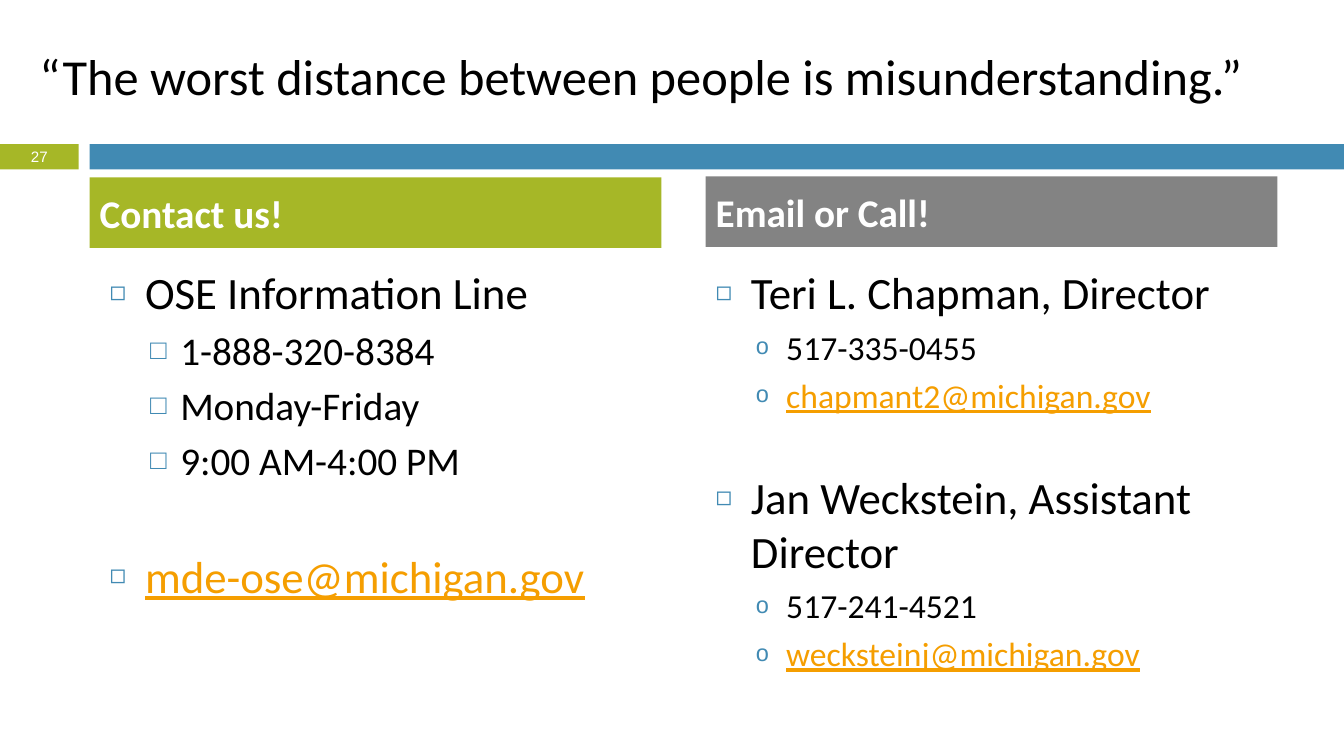
from dataclasses import dataclass

from lxml.etree import SubElement
from pptx import Presentation
from pptx.dml.color import RGBColor as RGB
from pptx.enum.shapes import MSO_SHAPE as SHAPE
from pptx.enum.text import MSO_ANCHOR as ANCHOR, PP_ALIGN as ALIGN
from pptx.oxml.ns import qn
from pptx.util import Inches, Pt


@dataclass(frozen=True)
class Theme:
    blue: str = "418AB3"
    green: str = "A6B727"
    gray: str = "838383"
    link: str = "F59E00"
    black: str = "000000"
    white: str = "FFFFFF"
    font: str = "Calibri"
    number_font: str = "Arial"
    title: float = 36
    item: float = 32
    head: float = 28
    number: float = 10.8


THEME = Theme()
LEVELS = [(0.35, 0.35, 60, 7), (0.7, 0.3, 70, 5.5)]


def write(p, text, size, color=THEME.black, font=THEME.font,
          bold=False, underline=False, align=ALIGN.LEFT):
    p.alignment = align
    r = p.add_run()
    r.text = text
    f = r.font
    f.name, f.size, f.bold, f.underline = font, Pt(size), bold, underline
    f.color.rgb = RGB.from_string(color)


def add_bullet(p, char, level, color):
    indent, hang, percent, _ = LEVELS[level]
    pPr = p._p.get_or_add_pPr()
    pPr.set("marL", str(Inches(indent)))
    pPr.set("indent", str(-Inches(hang)))
    SubElement(SubElement(pPr, qn("a:buClr")), qn("a:srgbClr"), val=color)
    SubElement(pPr, qn("a:buSzPct"), val=str(percent * 1000))
    SubElement(pPr, qn("a:buFont"), typeface=THEME.number_font)
    SubElement(pPr, qn("a:buChar"), char=char)


class ContactSlide:
    def __init__(self, prs, theme):
        self.theme = theme
        self.s = prs.slides.add_slide(prs.slide_layouts[5])

    def title(self, text, x, y, w, h):
        sp = self.s.shapes.title
        sp.left, sp.top, sp.width, sp.height = map(Inches, (x, y, w, h))
        tf = sp.text_frame
        tf.margin_left = tf.margin_right = tf.margin_top = tf.margin_bottom = 0
        tf.vertical_anchor = ANCHOR.MIDDLE
        tf.word_wrap = True
        write(tf.paragraphs[0], text, self.theme.title)

    def bar(self, x, y, w, h, fill, text="", **style):
        sp = self.s.shapes.add_shape(SHAPE.RECTANGLE, *map(Inches, (x, y, w, h)))
        sp.shadow.inherit = False
        sp.fill.solid()
        sp.fill.fore_color.rgb = RGB.from_string(fill)
        sp.line.fill.background()
        if text:
            tf = sp.text_frame
            tf.word_wrap = True
            tf.vertical_anchor = ANCHOR.MIDDLE
            write(tf.paragraphs[0], text, color=self.theme.white, **style)

    def contacts(self, x, y, w, h, items, char, sub_size, gap):
        tf = self.s.shapes.add_textbox(*map(Inches, (x, y, w, h))).text_frame
        tf.word_wrap = True
        for i, (level, text) in enumerate(items):
            p = tf.paragraphs[0] if i == 0 else tf.add_paragraph()
            p.level = level
            add_bullet(p, "□" if level and char == "□" else char if level else "◻",
                       level, self.theme.blue)
            if i:
                p.space_before = Pt(LEVELS[level][3] if level else gap)
            is_mail = "@" in text
            write(p, text, sub_size if level else self.theme.item,
                  color=self.theme.link if is_mail else self.theme.black,
                  underline=is_mail)


def main():
    prs = Presentation()
    prs.slide_width, prs.slide_height = Inches(13.33), Inches(7.5)
    t = THEME
    slide = ContactSlide(prs, t)
    slide.title("“The worst distance between people is misunderstanding.”",
                0.39, 0.21, 12.7, 1.08)
    slide.bar(0.89, 1.43, 12.44, 0.25, t.blue)
    slide.bar(0, 1.43, 0.78, 0.25, t.green, "27", size=t.number,
              font=t.number_font, align=ALIGN.CENTER)
    slide.bar(0.89, 1.76, 5.67, 0.7, t.green, "Contact us!", size=t.head, bold=True)
    slide.bar(7, 1.75, 5.67, 0.7, t.gray, "Email or Call!", size=t.head, bold=True)
    slide.contacts(0.99, 2.58, 5.47, 4.7, [
        (0, "OSE Information Line"),
        (1, "1-888-320-8384"),
        (1, "Monday-Friday"),
        (1, "9:00 AM-4:00 PM"),
        (0, "mde-ose@michigan.gov"),
    ], char="□", sub_size=28, gap=46.7)
    slide.contacts(7, 2.58, 5.67, 4.02, [
        (0, "Teri L. Chapman, Director"),
        (1, "517-335-0455"),
        (1, "chapmant2@michigan.gov"),
        (0, "Jan Weckstein, Assistant Director"),
        (1, "517-241-4521"),
        (1, "wecksteinj@michigan.gov"),
    ], char="o", sub_size=24, gap=39.3)
    prs.save("out.pptx")


if __name__ == "__main__":
    main()
